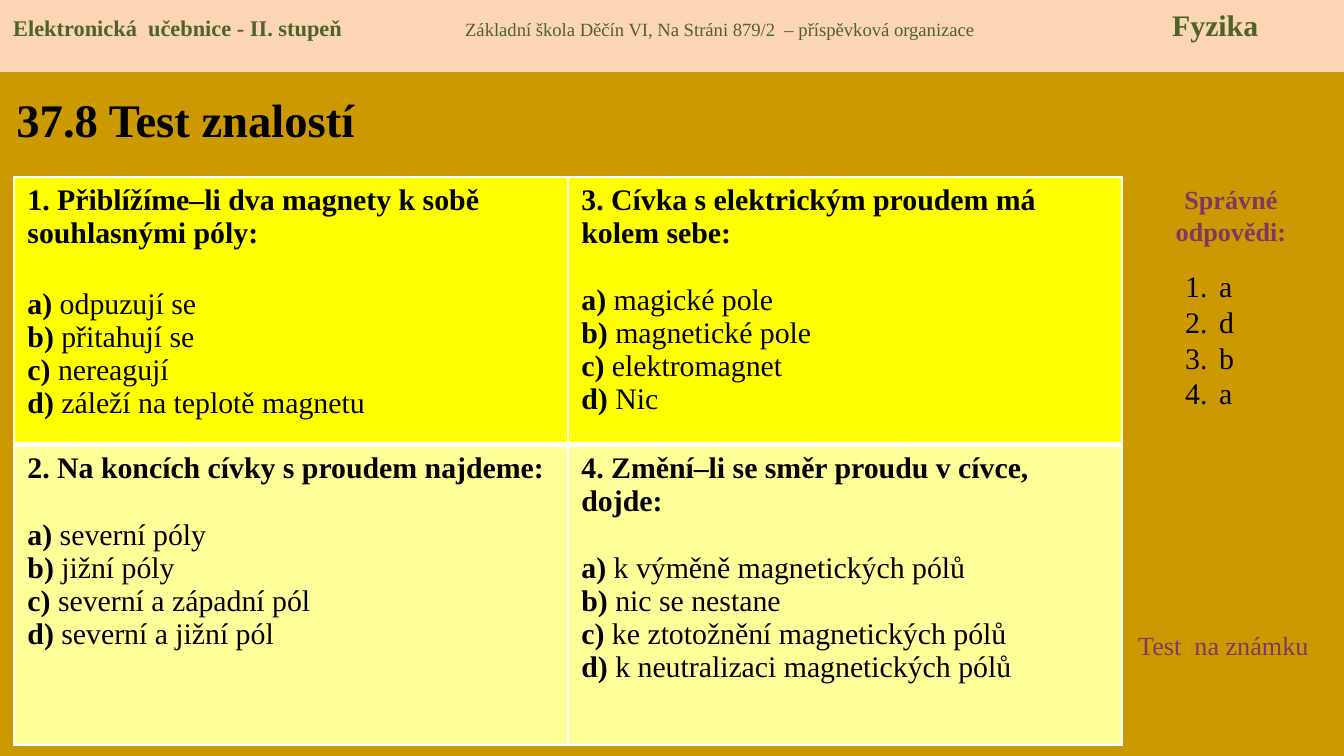
from lxml.etree import SubElement
from pptx import Presentation
from pptx.dml.color import RGBColor
from pptx.enum.shapes import MSO_SHAPE as Shape
from pptx.enum.text import MSO_ANCHOR as Anchor, PP_ALIGN as Align
from pptx.oxml.ns import qn
from pptx.util import Emu, Pt

FONT = "Times New Roman"
BLACK, WHITE, PURPLE, GREEN = "000000", "FFFFFF", "813763", "4F6228"
BACKGROUND, HEADER_FILL = "CC9900", "FCD5B5"
ROW_FILLS = ["FFFF00", "FFFF99"]
ROW_HEIGHTS = [268, 300]
COLUMN_WIDTH = 554

TITLE = "37.8 Test znalostí"
# text, size, bold, tab stop
HEADER = [
    ("Elektronická  učebnice - II. stupeň", 12, True, 0),
    ("Základní škola Děčín VI, Na Stráni 879/2  – příspěvková organizace", 10, False, 452),
    ("Fyzika", 16, True, 1159),
]
# question, space before the answers, answers; row by row
QUESTIONS = [
    [
        ("1. Přiblížíme–li dva magnety k sobě souhlasnými póly:", 20,
         ["odpuzují se", "přitahují se", "nereagují", "záleží na teplotě magnetu"]),
        ("3. Cívka s elektrickým proudem má kolem sebe:", 18,
         ["magické pole", "magnetické pole", "elektromagnet", "Nic"]),
    ],
    [
        ("2. Na koncích cívky s proudem najdeme:", 18,
         ["severní póly", "jižní póly", "severní a západní pól", "severní a jižní pól"]),
        ("4. Změní–li se směr proudu v cívce, dojde:", 18,
         ["k výměně magnetických pólů", "nic se nestane",
          "ke ztotožnění magnetických pólů", "k neutralizaci magnetických pólů"]),
    ],
]
KEY_TITLE = "Správné odpovědi:"
KEY = ["a", "d", "b", "a"]
GRADED_TEST = "Test  na známku"


def px(value):
    return Emu(round(value * 914400 / 134.4))


def color(hex_string):
    return RGBColor.from_string(hex_string)


def style(font, size, hex_string, bold=False):
    font.name, font.size, font.bold = FONT, Pt(size), bold
    font.color.rgb = color(hex_string)


def add_text(slide, box, lines, size, hex_string, bold=False):
    frame = slide.shapes.add_textbox(*map(px, box)).text_frame
    frame.word_wrap = True
    frame.text = "\n".join(lines)
    for paragraph in frame.paragraphs:
        style(paragraph.font, size, hex_string, bold)
    return frame


def number_paragraph(paragraph, indent):
    properties = paragraph._p.get_or_add_pPr()
    properties.set("marL", str(px(indent)))
    properties.set("indent", str(-px(indent)))
    SubElement(properties, qn("a:buFont"), typeface="+mj-lt")
    SubElement(properties, qn("a:buAutoNum"), type="arabicPeriod")


def add_borders(cell, widths):
    """Draw white borders; widths are points for left, right, top, bottom."""
    properties = cell._tc.get_or_add_tcPr()
    for index, (side, width) in enumerate(zip("LRTB", widths)):
        line = properties.makeelement(qn(f"a:ln{side}"), w=str(Pt(width)))
        fill = SubElement(line, qn("a:solidFill"))
        SubElement(fill, qn("a:srgbClr"), val=WHITE)
        properties.insert(index, line)


def fill_cell(cell, question, gap, answers):
    frame = cell.text_frame
    paragraph = frame.paragraphs[0]
    paragraph.text = question
    style(paragraph.font, 16, BLACK, True)
    for index, (letter, answer) in enumerate(zip("abcd", answers)):
        paragraph = frame.add_paragraph()
        if index == 0:
            paragraph.space_before = Pt(gap)
        for text, bold in ((f"{letter}) ", True), (answer, False)):
            run = paragraph.add_run()
            run.text = text
            style(run.font, 16, BLACK, bold)


def add_questions(slide):
    table = slide.shapes.add_table(
        2, 2, px(14), px(177), px(2 * COLUMN_WIDTH), px(sum(ROW_HEIGHTS))).table
    table.first_row = table.horz_banding = False
    for column in table.columns:
        column.width = px(COLUMN_WIDTH)
    for r, questions in enumerate(QUESTIONS):
        table.rows[r].height = px(ROW_HEIGHTS[r])
        for c, question in enumerate(questions):
            cell = table.cell(r, c)
            cell.fill.solid()
            cell.fill.fore_color.rgb = color(ROW_FILLS[r])
            add_borders(cell, (1, 1, 1, 3) if r == 0 else (1, 1, 3, 1))
            fill_cell(cell, *question)


def add_header(slide):
    band = slide.shapes.add_shape(Shape.RECTANGLE, 0, 0, px(1344), px(72))
    band.shadow.inherit = False
    band.fill.solid()
    band.fill.fore_color.rgb = color(HEADER_FILL)
    band.line.fill.background()
    band.text_frame.vertical_anchor = Anchor.TOP
    paragraph = band.text_frame.paragraphs[0]
    paragraph.alignment = Align.LEFT
    tabs = SubElement(paragraph._p.get_or_add_pPr(), qn("a:tabLst"))
    for text, size, bold, stop in HEADER:
        if stop:
            SubElement(tabs, qn("a:tab"), pos=str(px(stop)), algn="l")
        run = paragraph.add_run()
        run.text = "\t" + text if stop else text
        style(run.font, size, GREEN, bold)


def main():
    presentation = Presentation()
    presentation.slide_width, presentation.slide_height = px(1344), px(756)
    slide = presentation.slides.add_slide(presentation.slide_layouts[5])
    slide.background.fill.solid()
    slide.background.fill.fore_color.rgb = color(BACKGROUND)

    title = slide.shapes.title
    title.left, title.top, title.width, title.height = map(px, (3, 75, 428, 87))
    title.text_frame.text = TITLE
    title.text_frame.vertical_anchor = Anchor.MIDDLE
    paragraph = title.text_frame.paragraphs[0]
    paragraph.alignment = Align.LEFT
    style(paragraph.font, 25, BLACK, True)

    frame = add_text(slide, (1117, 177, 228, 77), [KEY_TITLE], 14, PURPLE, True)
    frame.paragraphs[0].alignment = Align.CENTER
    add_questions(slide)
    frame = add_text(slide, (1172, 261, 74, 160), KEY, 16, BLACK)
    for paragraph in frame.paragraphs:
        number_paragraph(paragraph, 34)
    add_text(slide, (1125, 623, 211, 46), [GRADED_TEST], 14, PURPLE)
    add_header(slide)
    presentation.save("out.pptx")


if __name__ == "__main__":
    main()
